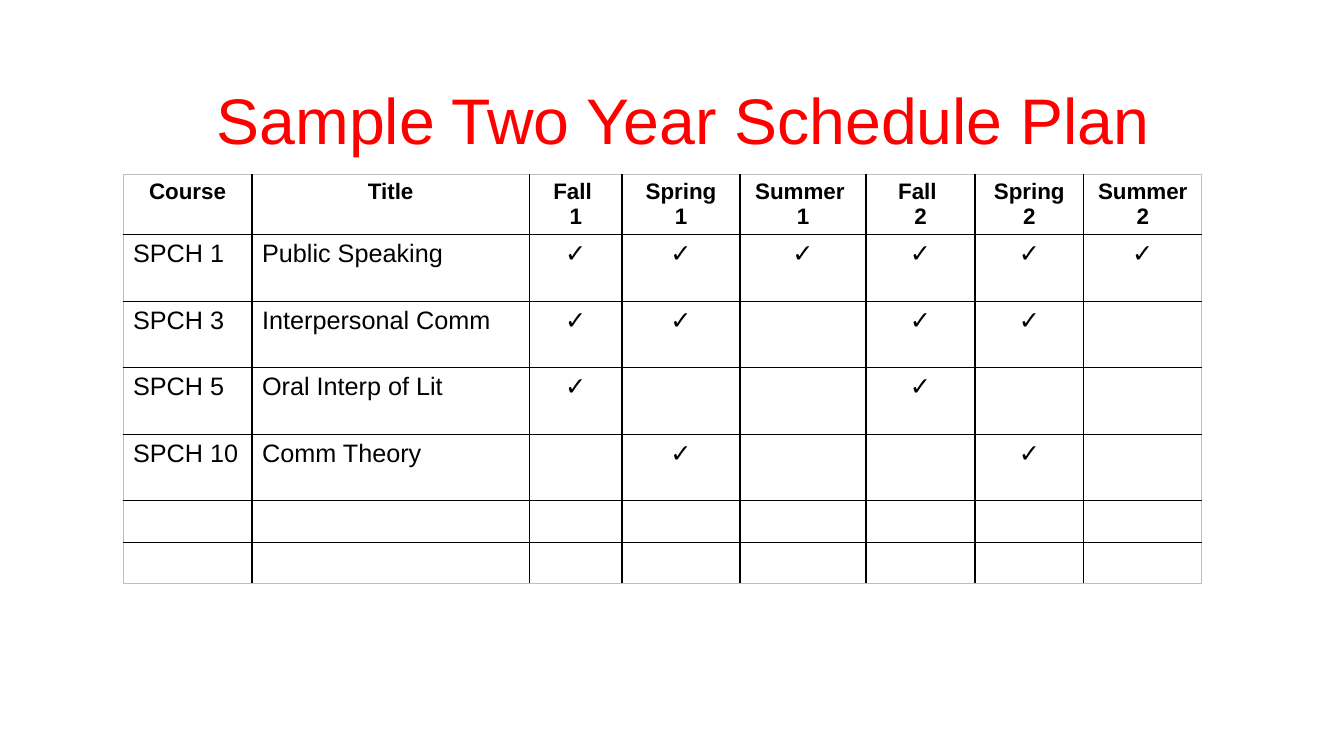
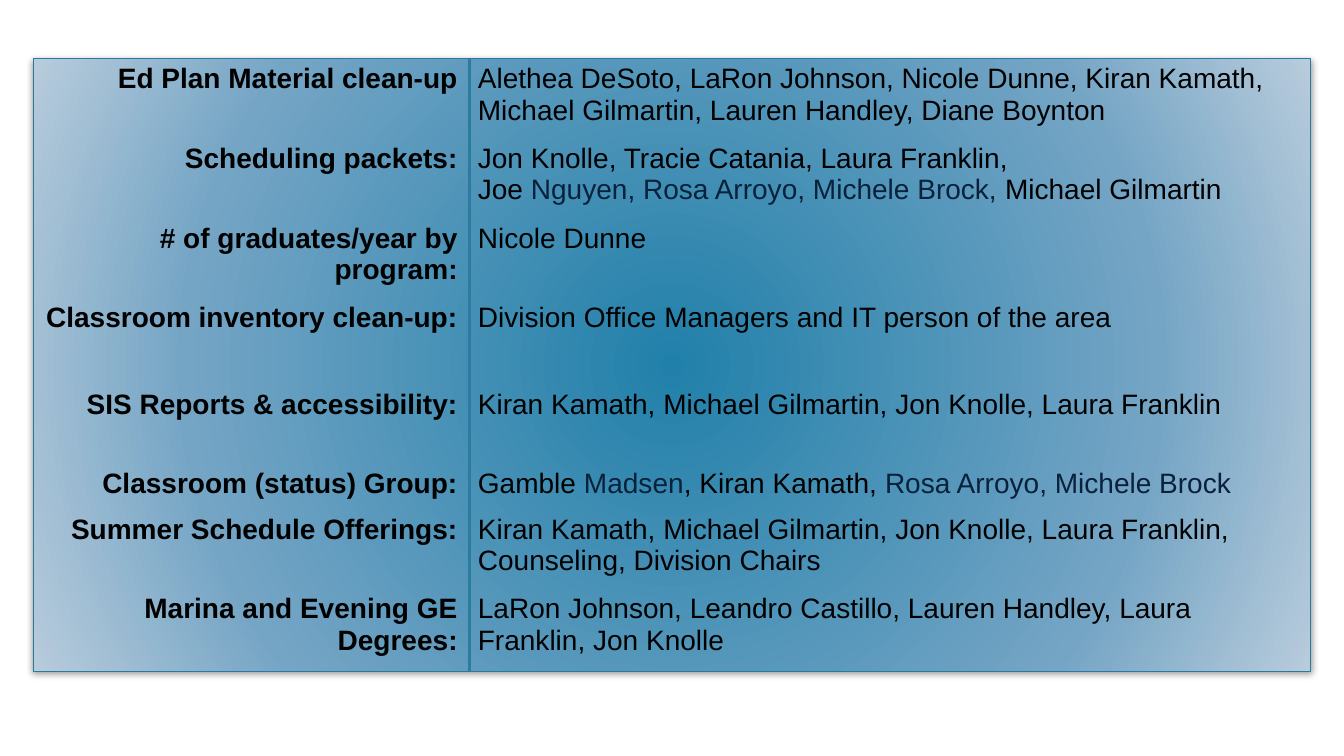
from dataclasses import dataclass
from pptx import Presentation
from pptx.dml.color import RGBColor
from pptx.enum.shapes import MSO_CONNECTOR, MSO_SHAPE
from pptx.enum.text import MSO_ANCHOR, MSO_AUTO_SIZE, PP_ALIGN
from pptx.oxml import parse_xml
from pptx.oxml.ns import qn
from pptx.util import Inches, Pt


@dataclass(frozen=True)
class Theme:
    font: str = "Arial"
    red: str = "FF0000"
    black: str = "000000"
    grey: str = "BFBFBF"
    navy: str = "09213B"
    edge: str = "287A9E"
    rule: str = "2C7C9F"
    glow: tuple = ((0, "2180AA"), (69, "75A5C5"), (100, "B8CCDC"))
    title: int = 46
    head: int = 16
    body: int = 18
    names: int = 20


theme = Theme()
NS = 'xmlns:a="http://schemas.openxmlformats.org/drawingml/2006/main"'
NO_GRID = "{2D5ABB26-0587-4C30-8999-92F81FD0307C}"


def style(par, size, bold=False, color=theme.black, align=PP_ALIGN.LEFT):
    par.alignment = align
    for run in par.runs:
        font = run.font
        font.name, font.size, font.bold = theme.font, Pt(size), bold
        font.color.rgb = RGBColor.from_string(color)


def grid(slide, left, top, widths, heights):
    frame = slide.shapes.add_table(
        len(heights), len(widths), Inches(left), Inches(top),
        Inches(sum(widths)), Inches(sum(heights)))
    table = frame.table
    table.first_row = table.horz_banding = False
    for tag in frame.element.iter(qn("a:tableStyleId")):
        tag.text = NO_GRID
    for col, width in zip(table.columns, widths):
        col.width = Inches(width)
    for row, height in zip(table.rows, heights):
        row.height = Inches(height)
    for cell in table.iter_cells():
        cell.fill.background()
    return table


deck = Presentation()
deck.slide_width, deck.slide_height = Inches(13.33), Inches(7.5)

# Slide 1: title
slide = deck.slides.add_slide(deck.slide_layouts[5])
title = slide.shapes.title
title.left, title.top = Inches(1.22), Inches(0.08)
title.width, title.height = Inches(11.11), Inches(1.53)
frame = title.text_frame
frame.text = "Sample Two Year Schedule Plan"
frame.auto_size = MSO_AUTO_SIZE.NONE
frame.vertical_anchor = MSO_ANCHOR.BOTTOM
style(frame.paragraphs[0], theme.title, color=theme.red, align=PP_ALIGN.CENTER)

# Slide 1: schedule, with the terms in which each course runs
heads = ["Course", "Title", "Fall \n1", "Spring\n1", "Summer \n1",
         "Fall \n2", "Spring\n2", "Summer 2"]
courses = [("SPCH 1", "Public Speaking", (1, 2, 3, 4, 5, 6)),
           ("SPCH 3", "Interpersonal Comm", (1, 2, 4, 5)),
           ("SPCH 5", "Oral Interp of Lit", (1, 4)),
           ("SPCH 10", "Comm Theory", (2, 5))]
rows = [heads]
for code, name, terms in courses:
    rows.append([code, name] + ["✓" if t in terms else "" for t in range(1, 7)])
rows += [[""] * len(heads)] * 2

widths = [1.28, 2.75, 0.92, 1.17, 1.25, 1.08, 1.08, 1.17]
heights = [0.6] + [0.66] * len(courses) + [0.41] * 2
table = grid(slide, 1.22, 1.73, widths, heights)
for r, row in enumerate(rows):
    for c, text in enumerate(row):
        cell = table.cell(r, c)
        cell.text_frame.text = text
        head = r == 0
        align = PP_ALIGN.CENTER if head or c > 1 else PP_ALIGN.LEFT
        for par in cell.text_frame.paragraphs:
            style(par, theme.head if head else theme.body, head, align=align)
        # Black inner lines, thin grey outer lines
        sides = {"L": c == 0, "R": c == len(row) - 1,
                 "T": r == 0, "B": r == len(rows) - 1}
        props = cell._tc.get_or_add_tcPr()
        for i, (side, outer) in enumerate(sides.items()):
            color = theme.grey if outer else theme.black
            width = Pt(0.5 if outer else 1)
            props.insert(i, parse_xml(
                f'<a:ln{side} {NS} w="{width}"><a:solidFill>'
                f'<a:srgbClr val="{color}"/></a:solidFill></a:ln{side}>'))

# Slide 2: panel with a round gradient and a soft shadow
slide = deck.slides.add_slide(deck.slide_layouts[6])
panel = slide.shapes.add_shape(
    MSO_SHAPE.RECTANGLE, Inches(0.33), Inches(0.58), Inches(12.67), Inches(6.08))
panel.line.color.rgb = RGBColor.from_string(theme.edge)
panel.line.width = Pt(1)
panel.fill.background()
props = panel.element.spPr
stops = "".join(f'<a:gs pos="{pos * 1000}"><a:srgbClr val="{color}"/></a:gs>'
                for pos, color in theme.glow)
props.replace(props.find(qn("a:noFill")), parse_xml(
    f'<a:gradFill {NS} rotWithShape="1"><a:gsLst>{stops}</a:gsLst>'
    '<a:path path="circle"><a:fillToRect l="50000" t="50000" r="50000" b="50000"/>'
    '</a:path></a:gradFill>'))
props.append(parse_xml(
    f'<a:effectLst {NS}><a:outerShdw blurRad="{Pt(5)}" dist="{Pt(2)}" dir="5400000" '
    f'rotWithShape="0"><a:srgbClr val="{theme.black}"><a:alpha val="40000"/>'
    '</a:srgbClr></a:outerShdw></a:effectLst>'))

# Slide 2: tasks and people; names between bars are navy
tasks = [
    ("Ed Plan Material clean-up", 0.79,
     "Alethea DeSoto, LaRon Johnson, Nicole Dunne, Kiran Kamath, "
     "Michael Gilmartin, Lauren Handley, Diane Boynton"),
    ("Scheduling packets:", 0.79,
     "Jon Knolle, Tracie Catania, Laura Franklin,\n"
     "Joe |Nguyen, Rosa Arroyo, Michele Brock,| Michael Gilmartin"),
    ("# of graduates/year by program:", 0.79, "Nicole Dunne"),
    ("Classroom inventory clean-up:", 0.86,
     "Division Office Managers and IT person of the area"),
    ("SIS Reports & accessibility:", 0.79,
     "Kiran Kamath, Michael Gilmartin, Jon Knolle, Laura Franklin"),
    ("Classroom (status) Group:", 0.45,
     "Gamble |Madsen|, Kiran Kamath, |Rosa Arroyo, Michele Brock"),
    ("Summer Schedule Offerings:", 0.79,
     "Kiran Kamath, Michael Gilmartin, Jon Knolle, Laura Franklin, "
     "Counseling, Division Chairs"),
    ("Marina and Evening GE Degrees:", 0.79,
     "LaRon Johnson, Leandro Castillo, Lauren Handley, Laura Franklin, Jon Knolle"),
]
table = grid(slide, 0.25, 0.58, [4.39, 8.36], [task[1] for task in tasks])
for r, (label, height, people) in enumerate(tasks):
    frame = table.cell(r, 0).text_frame
    frame.text = label
    style(frame.paragraphs[0], theme.names, True, align=PP_ALIGN.RIGHT)
    frame = table.cell(r, 1).text_frame
    for i, line in enumerate(people.split("\n")):
        par = frame.add_paragraph() if i else frame.paragraphs[0]
        for part in line.split("|"):
            par.add_run().text = part
        style(par, theme.names)
        for run in par.runs[1::2]:
            run.font.color.rgb = RGBColor.from_string(theme.navy)

# Slide 2: rule between the columns
rule = slide.shapes.add_connector(
    MSO_CONNECTOR.STRAIGHT, Inches(4.66), Inches(0.58), Inches(4.66), Inches(6.67))
rule.line.color.rgb = RGBColor.from_string(theme.rule)
rule.line.width = Pt(2)
rule.element.spPr.append(parse_xml(f"<a:effectLst {NS}/>"))

deck.save("out.pptx")
